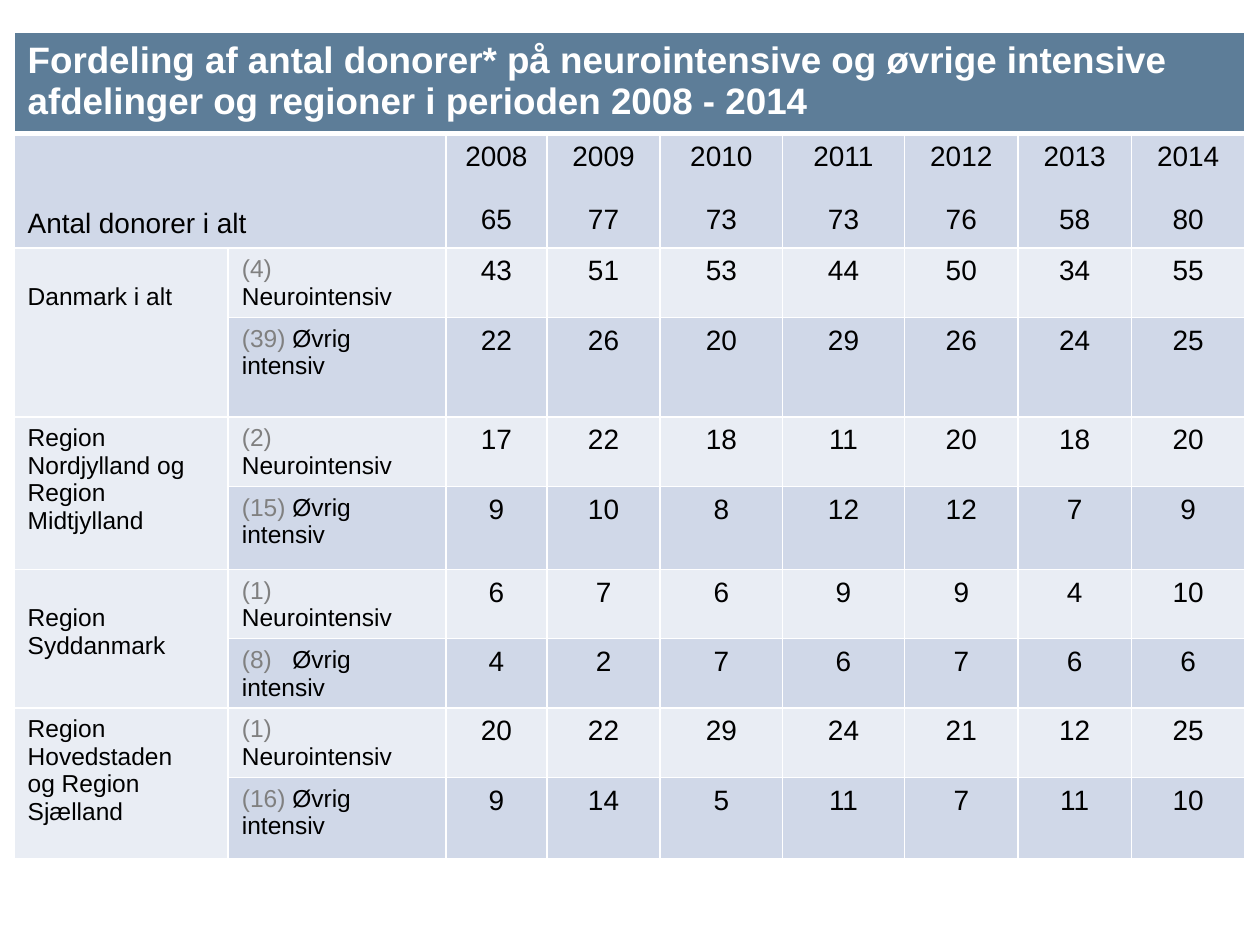
from dataclasses import dataclass

from lxml.etree import SubElement
from pptx import Presentation
from pptx.dml.color import RGBColor as Rgb
from pptx.enum.text import PP_ALIGN as Align
from pptx.oxml.ns import qn
from pptx.util import Inches, Pt

COLORS = {
    "head": "5D7D98", "dark": "D0D8E8", "light": "E9EDF4",
    "white": "FFFFFF", "black": "000000", "gray": "808080",
}
FONT = "Arial"
LEFT, TOP = 0.11, 0.26
COLS = [1.7, 1.73, 0.8, 0.9, 0.97, 0.97, 0.9, 0.9, 0.9]
ROWS = [0.8, 0.91, 0.55, 0.79, 0.55, 0.66, 0.55, 0.55, 0.55, 0.65]
PAD_X, PAD_TOP, PAD_LOW = 0.11, 0.06, 0.05
TAB = 0.4  # where the name starts after the unit count


@dataclass(frozen=True)
class Region:
    name: str
    units: tuple[int, int]  # neuro, other
    neuro: list[int]
    other: list[int]
    drop: float = 0  # extra space above the name


TITLE = ("Fordeling af antal donorer* på neurointensive og øvrige intensive "
         "afdelinger og regioner i perioden 2008 - 2014")
YEARS = range(2008, 2015)
TOTALS = [65, 77, 73, 73, 76, 58, 80]
REGIONS = [
    Region("Danmark i alt", (4, 39), [43, 51, 53, 44, 50, 34, 55],
           [22, 26, 20, 29, 26, 24, 25], 0.22),
    Region("Region Nordjylland og\nRegion Midtjylland", (2, 15),
           [17, 22, 18, 11, 20, 18, 20], [9, 10, 8, 12, 12, 7, 9]),
    Region("Region Syddanmark", (1, 8), [6, 7, 6, 9, 9, 4, 10],
           [4, 2, 7, 6, 7, 6, 6], 0.22),
    Region("Region Hovedstaden\nog Region Sjælland", (1, 16),
           [20, 22, 29, 24, 21, 12, 25], [9, 14, 5, 11, 7, 11, 10]),
]


def style(cell, fill: str, low: float = 1) -> None:
    """Fill a cell and give it white borders, the lower one `low` points."""
    props = cell._tc.get_or_add_tcPr()
    for side, width in (("L", 1), ("R", 1), ("T", 1), ("B", low)):
        line = SubElement(props, qn(f"a:ln{side}"), w=str(Pt(width)))
        paint = SubElement(line, qn("a:solidFill"))
        SubElement(paint, qn("a:srgbClr"), val=COLORS["white"])
    cell.fill.solid()
    cell.fill.fore_color.rgb = Rgb.from_string(COLORS[fill])
    cell.margin_left = cell.margin_right = Inches(PAD_X)
    cell.margin_top, cell.margin_bottom = Inches(PAD_TOP), Inches(PAD_LOW)


def write(cell, text: str, *, size: float = 16, color: str = "black",
          bold: bool = False, align=Align.LEFT, gap: float = 0,
          drop: float = 0, lead: str = "", tab: float = 0) -> None:
    """Write one paragraph per line; `lead` is a gray run before the text."""
    cell.margin_top = Inches(PAD_TOP + drop)
    frame = cell.text_frame
    for i, line in enumerate(text.split("\n")):
        para = frame.add_paragraph() if i else frame.paragraphs[0]
        para.alignment = align
        if i and gap:
            para.space_before = Pt(gap)
        if tab:
            stops = SubElement(para._p.get_or_add_pPr(), qn("a:tabLst"))
            SubElement(stops, qn("a:tab"), pos=str(Inches(tab)), algn="l")
        parts = [(lead, "gray")] if lead else []
        for words, hue in parts + [(line, color)]:
            if lead and not tab and words == line:
                para.add_line_break()
            run = para.add_run()
            run.text = words
            run.font.name, run.font.size = FONT, Pt(size)
            run.font.bold = bold
            run.font.color.rgb = Rgb.from_string(COLORS[hue])


def fill_row(table, row: int, texts: list[str], gap: float = 0) -> None:
    """Write centred figures from the third column on."""
    for col, text in enumerate(texts, 2):
        write(table.cell(row, col), text, align=Align.CENTER, gap=gap)


def add_region(table, row: int, region: Region) -> None:
    """Draw a region as two rows that share a merged name."""
    name = table.cell(row, 0)
    name.merge(table.cell(row + 1, 0))
    write(name, region.name, size=14, drop=region.drop)
    neuro, other = region.units
    write(table.cell(row, 1), "Neurointensiv", size=14, lead=f"({neuro})")
    write(table.cell(row + 1, 1), "\tØvrig intensiv", size=14,
          lead=f"({other})", tab=TAB)
    for step, values in enumerate((region.neuro, region.other)):
        fill_row(table, row + step, [str(v) for v in values])


def main() -> None:
    deck = Presentation()
    deck.slide_width, deck.slide_height = Inches(10), Inches(7.5)
    slide = deck.slides.add_slide(deck.slide_layouts[6])

    # Table grid
    table = slide.shapes.add_table(
        len(ROWS), len(COLS), Inches(LEFT), Inches(TOP),
        Inches(sum(COLS)), Inches(sum(ROWS))).table
    table.first_row = table.horz_banding = False
    for col, width in zip(table.columns, COLS):
        col.width = Inches(width)
    for row, height in zip(table.rows, ROWS):
        row.height = Inches(height)

    # Fills and borders
    for r in range(len(ROWS)):
        for c in range(len(COLS)):
            light = r > 1 and (c == 0 or r % 2 == 0)
            fill = "head" if r == 0 else "light" if light else "dark"
            style(table.cell(r, c), fill, low=1 if r else 3)

    # Title and totals
    title = table.cell(0, 0)
    title.merge(table.cell(0, len(COLS) - 1))
    write(title, TITLE, size=21, color="white", bold=True)
    total = table.cell(1, 0)
    total.merge(table.cell(1, 1))
    write(total, "Antal donorer i alt", drop=0.53)
    fill_row(table, 1, [f"{y}\n{t}" for y, t in zip(YEARS, TOTALS)], gap=18.5)

    # Regions
    for i, region in enumerate(REGIONS):
        add_region(table, 2 + 2 * i, region)

    deck.save("out.pptx")


if __name__ == "__main__":
    main()
